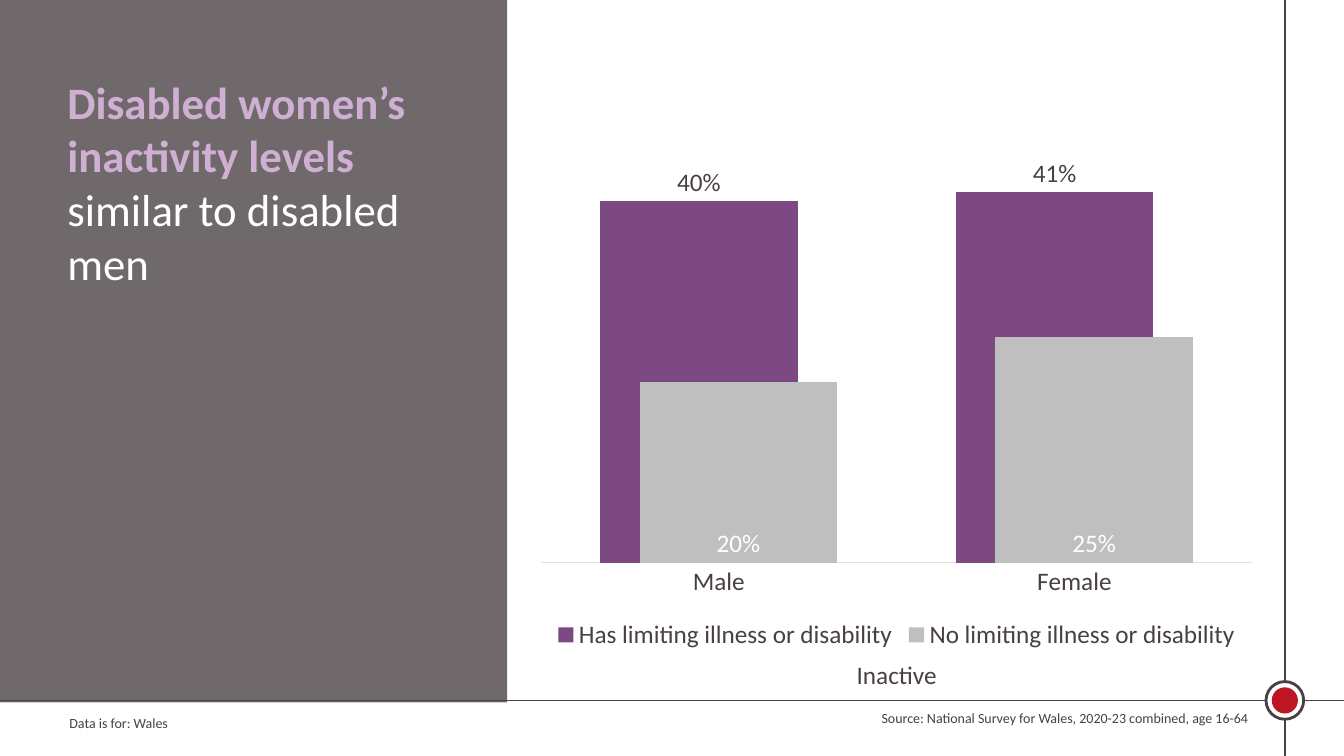
from lxml import etree
from pptx import Presentation
from pptx.chart.data import CategoryChartData
from pptx.dml.color import RGBColor
from pptx.enum.chart import XL_CHART_TYPE, XL_LABEL_POSITION, XL_LEGEND_POSITION, XL_TICK_MARK
from pptx.enum.shapes import MSO_CONNECTOR, MSO_SHAPE
from pptx.enum.text import MSO_AUTO_SIZE, PP_ALIGN
from pptx.oxml.ns import qn
from pptx.util import Cm, Pt

COLUMNS = XL_CHART_TYPE.COLUMN_CLUSTERED
OUTSIDE_END = XL_LABEL_POSITION.OUTSIDE_END
INSIDE_BASE = XL_LABEL_POSITION.INSIDE_BASE
LEGEND_BOTTOM = XL_LEGEND_POSITION.BOTTOM
NO_TICKS = XL_TICK_MARK.NONE
STRAIGHT = MSO_CONNECTOR.STRAIGHT
RECTANGLE, OVAL = MSO_SHAPE.RECTANGLE, MSO_SHAPE.OVAL
GROW = MSO_AUTO_SIZE.SHAPE_TO_FIT_TEXT
FIXED = MSO_AUTO_SIZE.NONE
LEFT, RIGHT = PP_ALIGN.LEFT, PP_ALIGN.RIGHT


class Theme:
    font = "Calibri"
    title_size, chart_size, note_size = 32, 18, 10
    ink = "484043"
    white = "FFFFFF"
    lilac = "CFB0D3"
    purple = "7C4982"
    silver = "BFBFBF"
    red = "BD1622"
    axis = "E5E1E3"


# Runs are (text, colour, bold); places are left, top, width, height in cm.
TITLE = [("Disabled women’s inactivity levels ", Theme.lilac, True),
         ("similar to disabled men", Theme.white, False)]
CAPTION = [("Inactive", Theme.ink, False)]
COVERAGE = [("Data is for: Wales", Theme.ink, False)]
SOURCE = [("Source: National Survey for Wales, 2020-23 combined, age 16-64",
           Theme.ink, False)]
TEXTS = [
    (COVERAGE, (1.5, 17.88, 11.15, 0.69), Theme.note_size, LEFT, GROW),
    (SOURCE, (21.13, 17.75, 10.57, 0.69), Theme.note_size, RIGHT, GROW),
    (TITLE, (1.45, 1.75, 9.47, 9.58), Theme.title_size, LEFT, FIXED),
    (CAPTION, (21.34, 16.48, 3.1, 1.02), Theme.chart_size, LEFT, GROW),
]
CATEGORIES = ["Male", "Female"]
# Name, values, bar colour, label colour, label position
SERIES = [
    ("Has limiting illness or disability", (0.40, 0.41),
     Theme.purple, Theme.ink, OUTSIDE_END),
    ("No limiting illness or disability", (0.20, 0.25),
     Theme.silver, Theme.white, INSIDE_BASE),
]
CHART_PLACE = (13.26, 3.68, 18.67, 12.83)
SLIDE_WIDTH, SLIDE_HEIGHT = 33.87, 19.05
CROSS_X, CROSS_Y = 32.38, 17.65
PANEL_PLACE = (0, 0, 12.78, 17.7)
# Diameter, fill, outline width
DISCS = [(0.95, Theme.white, 2), (0.66, Theme.red, 0)]


def rgb(value):
    return RGBColor.from_string(value)


def lengths(place):
    return [Cm(value) for value in place]


def style_font(font, size, color, bold=False):
    font.name = Theme.font
    font.size = Pt(size)
    font.bold = bold
    font.color.rgb = rgb(color)


def add_text(slide, runs, place, size, alignment, auto_size):
    frame = slide.shapes.add_textbox(*lengths(place)).text_frame
    frame.word_wrap = True
    frame.auto_size = auto_size
    paragraph = frame.paragraphs[0]
    paragraph.alignment = alignment
    for text, color, bold in runs:
        run = paragraph.add_run()
        run.text = text
        style_font(run.font, size, color, bold)


def add_rule(slide, start, end):
    rule = slide.shapes.add_connector(STRAIGHT, *lengths(start + end))
    rule.line.color.rgb = rgb(Theme.ink)
    rule.line.width = Pt(1)
    etree.SubElement(rule.element.spPr, qn("a:effectLst"))


def add_filled(shapes, kind, place, fill, outline=0):
    shape = shapes.add_shape(kind, *lengths(place))
    shape.shadow.inherit = False
    shape.fill.solid()
    shape.fill.fore_color.rgb = rgb(fill)
    if outline:
        shape.line.color.rgb = rgb(Theme.ink)
        shape.line.width = Pt(outline)
    else:
        shape.line.fill.background()
    return shape


def add_frame(slide):
    """Draw the crossing rules, the marker where they meet and the title panel."""
    add_rule(slide, (CROSS_X, 0), (CROSS_X, SLIDE_HEIGHT))
    add_rule(slide, (0, CROSS_Y), (SLIDE_WIDTH, CROSS_Y))
    marker = slide.shapes.add_group_shape()
    for diameter, fill, outline in DISCS:
        place = (CROSS_X - diameter / 2, CROSS_Y - diameter / 2, diameter, diameter)
        add_filled(marker.shapes, OVAL, place, fill, outline)
    panel = add_filled(slide.shapes, RECTANGLE, PANEL_PLACE, Theme.ink)
    color = panel.element.spPr.find(qn("a:solidFill")).find(qn("a:srgbClr"))
    etree.SubElement(color, qn("a:alpha")).set("val", "78000")


def add_inactivity_chart(slide):
    data = CategoryChartData(number_format="0%")
    data.categories = CATEGORIES
    for name, values, *_ in SERIES:
        data.add_series(name, values)
    chart = slide.shapes.add_chart(COLUMNS, *lengths(CHART_PLACE), data).chart
    style_font(chart.font, Theme.chart_size, Theme.ink)
    chart.has_title = False
    chart.has_legend = True
    chart.legend.position = LEGEND_BOTTOM
    chart.legend.include_in_layout = False
    style_font(chart.legend.font, Theme.chart_size, Theme.ink)

    value_axis = chart.value_axis
    value_axis.visible = False
    value_axis.has_major_gridlines = False
    value_axis.minimum_scale, value_axis.maximum_scale = 0, 0.45
    category_axis = chart.category_axis
    category_axis.major_tick_mark = NO_TICKS
    category_axis.format.line.color.rgb = rgb(Theme.axis)
    category_axis.format.line.width = Pt(0.75)
    style_font(category_axis.tick_labels.font, Theme.chart_size, Theme.ink)

    plot = chart.plots[0]
    plot.gap_width, plot.overlap = 60, 80
    plot.vary_by_categories = False
    for series, (_, _, fill, label_color, position) in zip(plot.series, SERIES):
        series.format.fill.solid()
        series.format.fill.fore_color.rgb = rgb(fill)
        labels = series.data_labels
        labels.show_value = True
        labels.number_format = "0%"
        labels.number_format_is_linked = False
        labels.position = position
        style_font(labels.font, Theme.chart_size, label_color)


def main():
    presentation = Presentation()
    presentation.slide_width = Cm(SLIDE_WIDTH)
    presentation.slide_height = Cm(SLIDE_HEIGHT)
    slide = presentation.slides.add_slide(presentation.slide_layouts[6])
    add_frame(slide)
    for text in TEXTS:
        add_text(slide, *text)
    add_inactivity_chart(slide)
    presentation.save("out.pptx")


if __name__ == "__main__":
    main()
